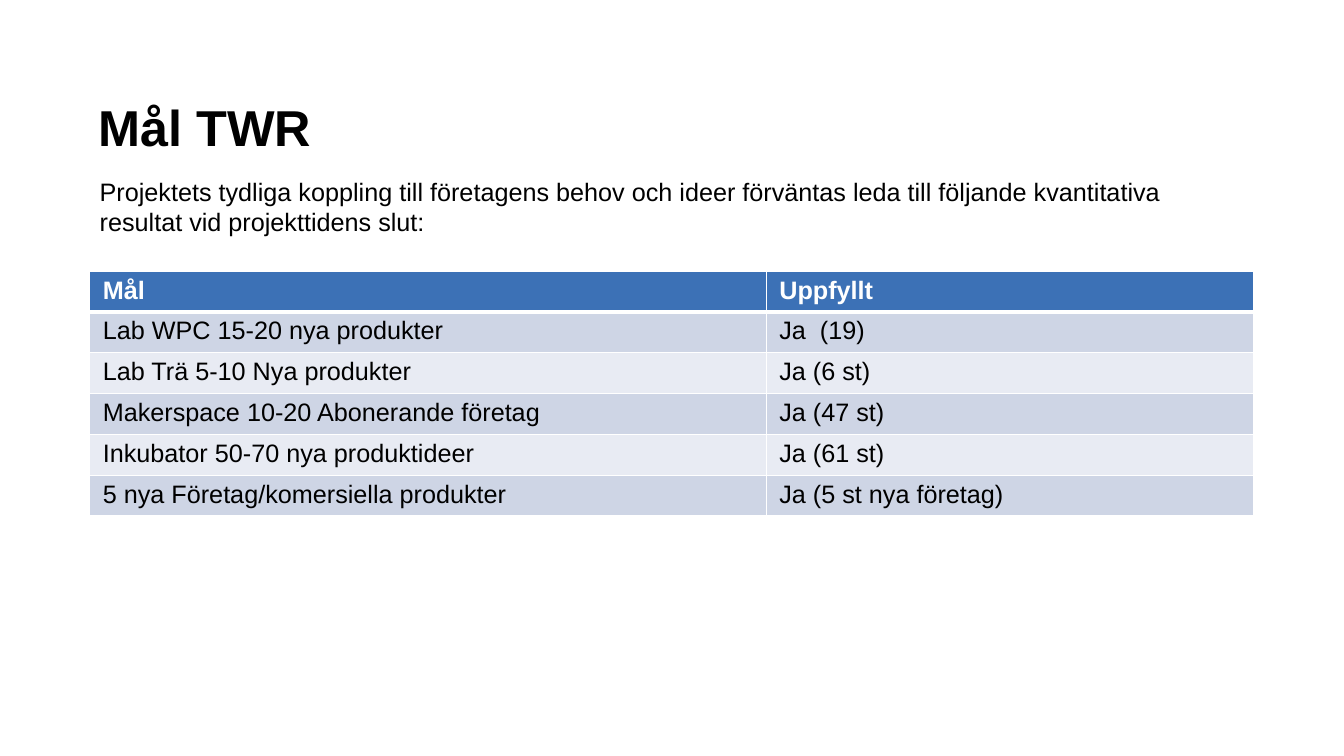
from pptx import Presentation
from pptx.dml.color import RGBColor
from pptx.enum.text import MSO_ANCHOR, PP_ALIGN
from pptx.oxml import parse_xml
from pptx.oxml.ns import nsdecls
from pptx.util import Inches, Pt

COLORS = {
    "text": "000000",
    "white": "FFFFFF",
    "header": "3C71B6",
    "odd_row": "CED5E5",
    "even_row": "E8EBF3",
}
INTRO = (
    "Projektets tydliga koppling till företagens behov och ideer förväntas "
    "leda till följande kvantitativa resultat vid projekttidens slut:"
)
GOALS = [
    ("Mål", "Uppfyllt"),
    ("Lab WPC 15-20 nya produkter", "Ja  (19)"),
    ("Lab Trä 5-10 Nya produkter", "Ja (6 st)"),
    ("Makerspace 10-20 Abonerande företag", "Ja (47 st)"),
    ("Inkubator 50-70 nya produktideer", "Ja (61 st)"),
    ("5 nya Företag/komersiella produkter", "Ja (5 st nya företag)"),
]
COLUMN_WIDTHS = (6.71, 4.83)
ROW_HEIGHT = 0.405


def color(name):
    return RGBColor.from_string(COLORS[name])


def set_attributes(target, values):
    for name, value in values.items():
        setattr(target, name, value)


def write_text(frame, text, size=18, bold=False, ink="text"):
    frame.text = text
    paragraph = frame.paragraphs[0]
    paragraph.alignment = PP_ALIGN.LEFT
    set_attributes(paragraph.font, {"name": "Arial", "size": Pt(size), "bold": bold})
    paragraph.font.color.rgb = color(ink)


def add_title(slide, text):
    title = slide.shapes.title
    set_attributes(title, {
        "left": Inches(0.9), "top": Inches(0.84),
        "width": Inches(10.16), "height": Inches(1.3),
    })
    set_attributes(title.text_frame, {
        "vertical_anchor": MSO_ANCHOR.TOP, "word_wrap": True,
        "margin_left": Inches(0.08), "margin_top": Inches(0.11),
    })
    write_text(title.text_frame, text, size=36, bold=True)


def add_intro(slide, text):
    intro = slide.shapes.add_textbox(
        Inches(0.89), Inches(1.7), Inches(11.55), Inches(0.71))
    intro.text_frame.word_wrap = True
    write_text(intro.text_frame, text)


def set_borders(cell, widths):
    """Draw white borders; widths maps each side's tag to points."""
    properties = cell._tc.get_or_add_tcPr()
    for position, (side, width) in enumerate(widths.items()):
        properties.insert(position, parse_xml(
            f'<a:{side} {nsdecls("a")} w="{Pt(width)}"><a:solidFill>'
            f'<a:srgbClr val="{COLORS["white"]}"/></a:solidFill></a:{side}>'))


def add_goal_table(slide, goals):
    table = slide.shapes.add_table(
        len(goals), len(COLUMN_WIDTHS), Inches(0.89), Inches(2.69),
        Inches(sum(COLUMN_WIDTHS)), Inches(ROW_HEIGHT * len(goals))).table
    for column, width in zip(table.columns, COLUMN_WIDTHS):
        column.width = Inches(width)
    for row_index, goal in enumerate(goals):
        is_header = row_index == 0
        band = "header" if is_header else "odd_row" if row_index % 2 else "even_row"
        for column_index, text in enumerate(goal):
            cell = table.cell(row_index, column_index)
            set_attributes(cell, {
                "margin_left": Inches(0.13), "margin_right": Inches(0.13),
                "margin_top": Inches(0.05), "margin_bottom": Inches(0.05),
            })
            cell.fill.solid()
            cell.fill.fore_color.rgb = color(band)
            write_text(cell.text_frame, text, bold=is_header,
                       ink="white" if is_header else "text")
            set_borders(cell, {
                "lnL": 1, "lnR": 1,
                "lnT": 3 if row_index == 1 else 1,
                "lnB": 3 if is_header else 1,
            })


def main():
    presentation = Presentation()
    presentation.slide_width = Inches(13.33)
    presentation.slide_height = Inches(7.5)
    title_only = presentation.slide_layouts[5]
    slide = presentation.slides.add_slide(title_only)
    add_title(slide, "Mål TWR")
    add_goal_table(slide, GOALS)
    add_intro(slide, INTRO)
    presentation.save("out.pptx")


if __name__ == "__main__":
    main()
